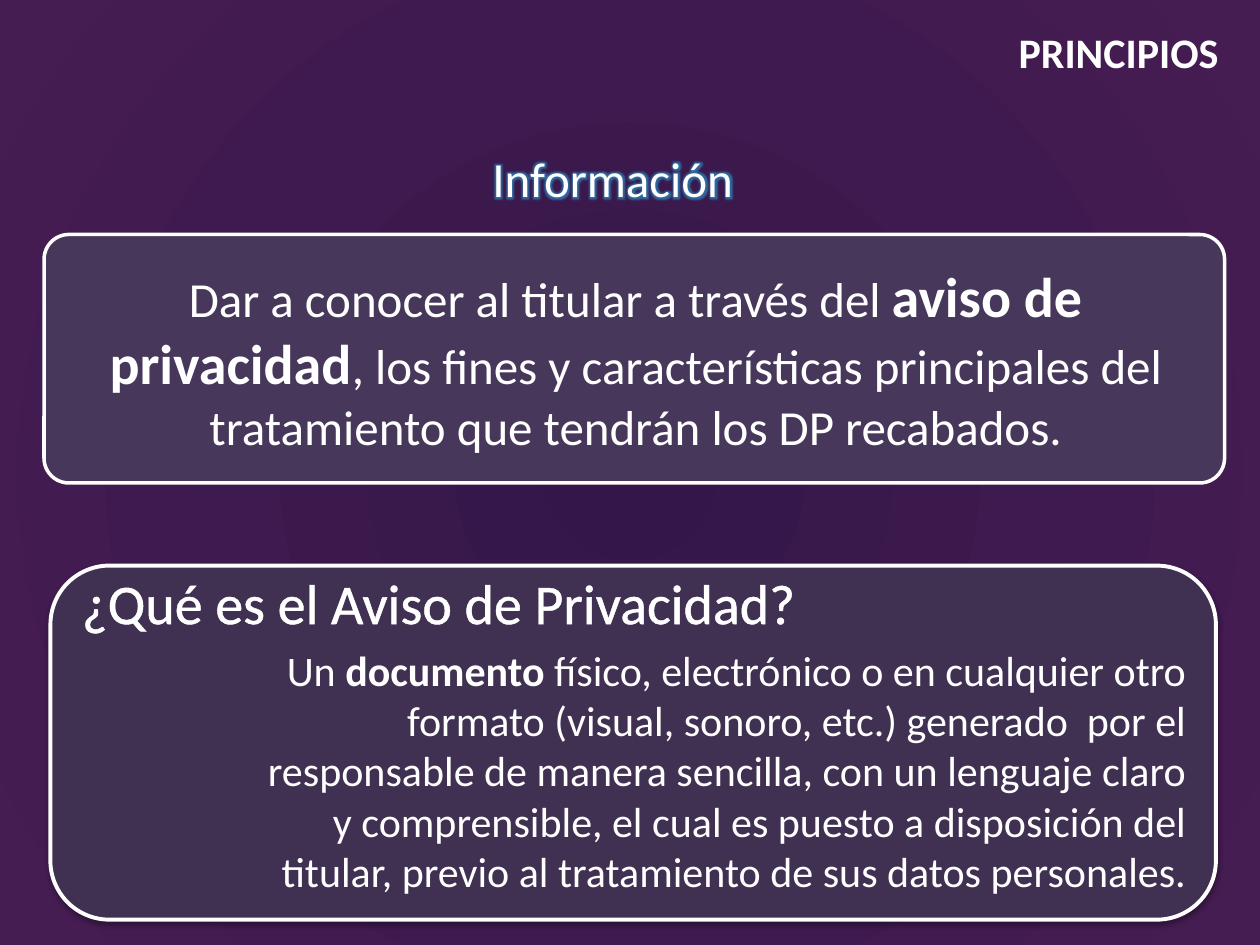
import dataclasses

import pptx
import pptx.dml.color
import pptx.enum.shapes
import pptx.enum.text
import pptx.oxml
import pptx.oxml.ns
import pptx.util

Pt = pptx.util.Pt
ALIGN = pptx.enum.text.PP_ALIGN
ANCHOR = pptx.enum.text.MSO_ANCHOR
FIT = pptx.enum.text.MSO_AUTO_SIZE
SHAPE = pptx.enum.shapes.MSO_SHAPE
NS = pptx.oxml.ns.nsdecls("a")
qn = pptx.oxml.ns.qn


@dataclasses.dataclass(frozen=True)
class Theme:
    font: str = "Calibri"
    white: str = "FFFFFF"
    core: str = "34164A"
    rim: str = "461D53"
    panel: str = "47375B"
    card: str = "403152"
    glow: str = "2E6AA0"
    shade: str = "000000"
    small: int = 24
    body: int = 28
    large: int = 32


THEME = Theme()


def color(code):
    return pptx.dml.color.RGBColor.from_string(code)


def paint(slide):
    """Fill the background with a circular gradient."""
    fill = slide.background.fill
    fill.gradient()
    for stop, code in zip(fill.gradient_stops, (THEME.core, THEME.rim)):
        stop.color.rgb = color(code)
    grad = slide.background._cSld.find(".//" + qn("a:gradFill"))
    grad.replace(grad.find(qn("a:lin")), pptx.oxml.parse_xml(
        f'<a:path {NS} path="circle">'
        '<a:fillToRect l="50000" t="50000" r="50000" b="50000"/></a:path>'))


def write(shape, runs, align, anchor=ANCHOR.TOP):
    """Fill one paragraph from (text, size, bold) runs."""
    frame = shape.text_frame
    frame.word_wrap = True
    frame.vertical_anchor = anchor
    para = frame.paragraphs[0]
    para.alignment = align
    for text, size, bold in runs:
        run = para.add_run()
        run.text = text
        run.font.size = Pt(size)
        run.font.bold = bold
        run.font.color.rgb = color(THEME.white)
        run.font.name = THEME.font
    return para


def label(slide, box, text, size, align, bold=False):
    shape = slide.shapes.add_textbox(*map(Pt, box))
    write(shape, [(text, size, bold)], align)
    return shape


def block(slide, kind, box, fill, line=None):
    shape = slide.shapes.add_shape(kind, *map(Pt, box))
    shape.shadow.inherit = False
    shape.fill.solid()
    shape.fill.fore_color.rgb = color(fill)
    if line:
        shape.line.color.rgb = color(THEME.white)
        shape.line.width = Pt(line)
    else:
        shape.line.fill.background()
    return shape


def shade(shape):
    effects = shape._element.spPr.find(qn("a:effectLst"))
    effects.append(pptx.oxml.parse_xml(
        f'<a:outerShdw {NS} blurRad="{Pt(3.1)}" dist="{Pt(1.8)}" '
        'dir="5400000" rotWithShape="0">'
        f'<a:srgbClr val="{THEME.shade}"><a:alpha val="35000"/></a:srgbClr>'
        '</a:outerShdw>'))


def glow(shape):
    """Put a soft halo around the letters."""
    props = shape.text_frame.paragraphs[0].runs[0].font._element
    props.find(qn("a:solidFill")).addnext(pptx.oxml.parse_xml(
        f'<a:effectLst {NS}><a:glow rad="{Pt(5)}">'
        f'<a:srgbClr val="{THEME.glow}"/></a:glow></a:effectLst>'))


def outline(shape, width):
    props = shape.text_frame.paragraphs[0].runs[0].font._element
    props.insert(0, pptx.oxml.parse_xml(
        f'<a:ln {NS} w="{Pt(width)}"><a:solidFill>'
        f'<a:srgbClr val="{THEME.white}"/></a:solidFill></a:ln>'))


def aim(slide):
    """Add the framed statement of the principle."""
    panel = block(slide, SHAPE.ROUNDED_RECTANGLE, (25.2, 134, 674.6, 142),
                  THEME.panel, 2)
    panel.adjustments[0] = 0.1
    body = block(slide, SHAPE.RECTANGLE, (37.4, 138.2, 651.6, 133.2),
                 THEME.panel)
    frame = body.text_frame
    frame.margin_left = frame.margin_right = Pt(2.2)
    frame.margin_top = frame.margin_bottom = Pt(2.2)
    write(body, [
        ("Dar a conocer al titular a través del ", THEME.body, False),
        ("aviso de privacidad", THEME.large, True),
        (", los fines y características principales del tratamiento que "
         "tendrán los DP recabados.", THEME.body, False),
    ], ALIGN.CENTER, ANCHOR.MIDDLE)
    slide.shapes.add_group_shape([panel, body])


def notice(slide):
    """Add the card that defines the privacy notice."""
    card = block(slide, SHAPE.ROUNDED_RECTANGLE, (28.8, 323.2, 666, 202.3),
                 THEME.card, 2.25)
    shade(card)
    para = write(card, [
        ("Un ", THEME.small, False),
        ("documento", THEME.small, True),
        (" físico, electrónico o en cualquier otro formato (visual, sonoro, "
         "etc.) generado  por el responsable de manera sencilla, con un "
         "lenguaje claro y comprensible, el cual es puesto a disposición del "
         "titular, previo al tratamiento de sus datos personales.",
         THEME.small, False),
    ], ALIGN.RIGHT, ANCHOR.BOTTOM)
    props = para._p.get_or_add_pPr()
    props.set("marL", str(Pt(105.8)))
    props.set("indent", "0")
    title = label(slide, (2.9, 321.1, 496, 67.7),
                  "¿Qué es el Aviso de Privacidad?", THEME.large, ALIGN.CENTER)
    outline(title, 1.45)


def main():
    deck = pptx.Presentation()
    deck.slide_width, deck.slide_height = Pt(720), Pt(540)
    slide = deck.slides.add_slide(deck.slide_layouts[6])
    paint(slide)
    head = label(slide, (191.5, 11.5, 512, 36), "PRINCIPIOS", THEME.small,
                 ALIGN.RIGHT, True)
    head.text_frame.auto_size = FIT.SHAPE_TO_FIT_TEXT
    aim(slide)
    topic = label(slide, (274.3, 81.4, 153.4, 41), "Información", THEME.body,
                  ALIGN.LEFT)
    topic.text_frame.word_wrap = False
    topic.text_frame.auto_size = FIT.SHAPE_TO_FIT_TEXT
    glow(topic)
    notice(slide)
    deck.save("out.pptx")


if __name__ == "__main__":
    main()
